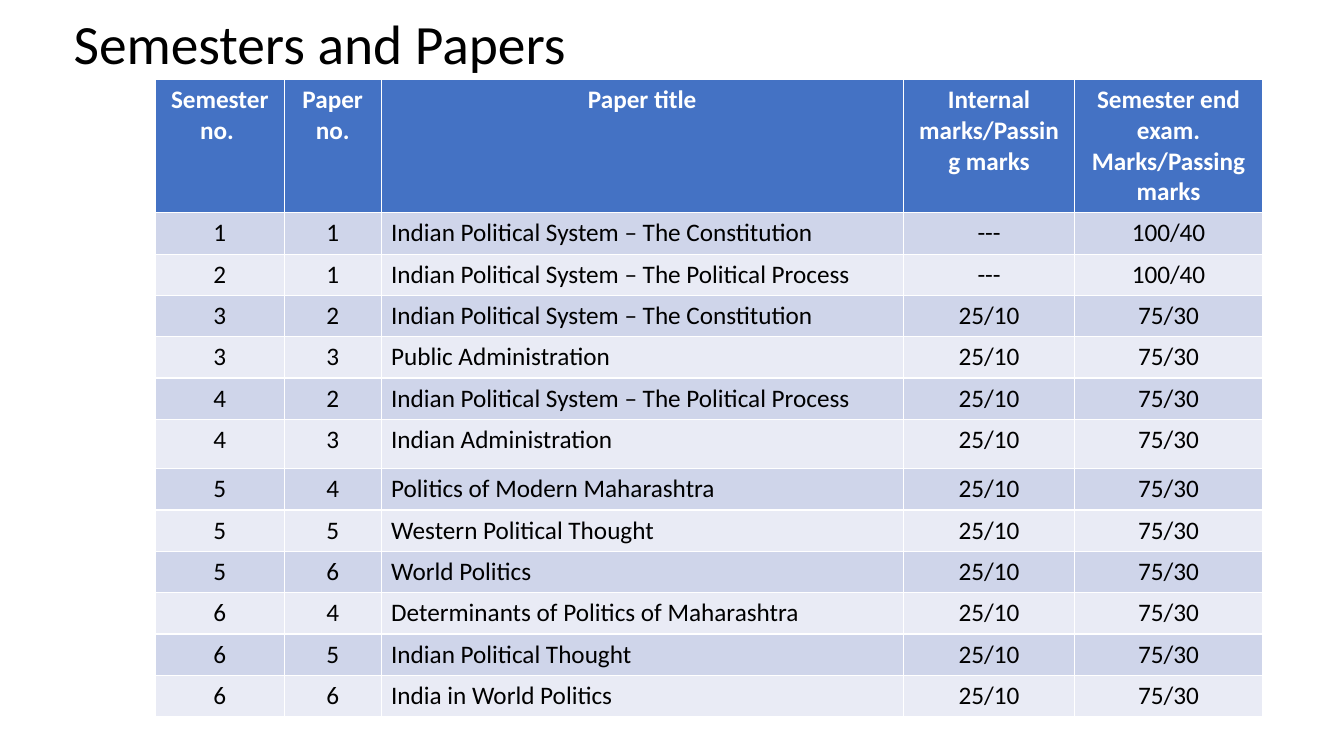
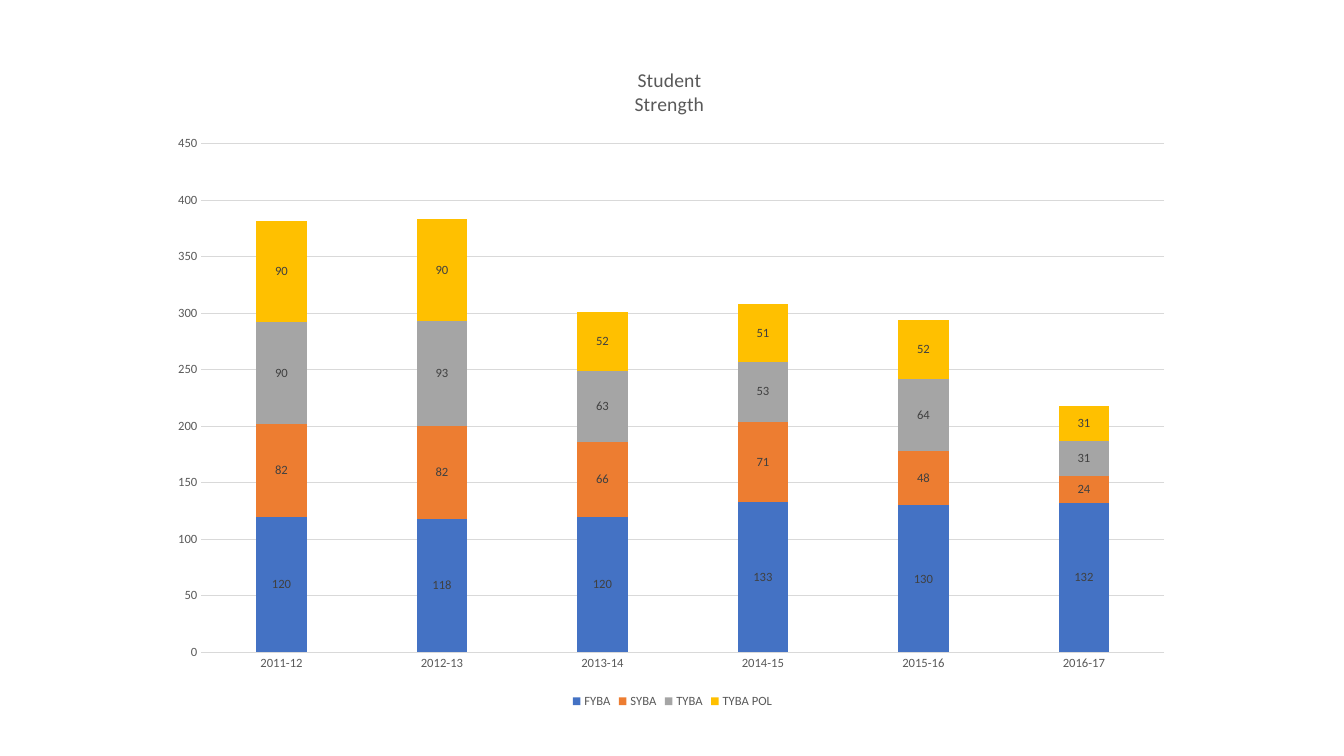
from lxml import etree
from pptx import Presentation
from pptx.chart.data import CategoryChartData
from pptx.dml.color import RGBColor
from pptx.enum.chart import XL_CHART_TYPE, XL_LEGEND_POSITION, XL_TICK_MARK
from pptx.enum.text import MSO_ANCHOR, MSO_AUTO_SIZE, PP_ALIGN
from pptx.oxml.ns import qn
from pptx.util import Inches, Pt


class Theme:
    font = "Calibri"
    black = RGBColor(0x00, 0x00, 0x00)
    white = RGBColor(0xFF, 0xFF, 0xFF)
    blue = RGBColor(0x44, 0x72, 0xC4)
    orange = RGBColor(0xED, 0x7D, 0x31)
    grey = RGBColor(0xA5, 0xA5, 0xA5)
    gold = RGBColor(0xFF, 0xC0, 0x00)
    bands = (RGBColor(0xCF, 0xD5, 0xEA), RGBColor(0xE9, 0xEB, 0xF5))
    label = RGBColor(0x40, 0x40, 0x40)
    axis_text = RGBColor(0x59, 0x59, 0x59)
    rule = RGBColor(0xD9, 0xD9, 0xD9)
    title_size = 39.6
    table_size = 18
    chart_title_size = 14
    chart_size = 9


def set_font(font, size, color, bold=False):
    font.name = Theme.font
    font.size = Pt(size)
    font.color.rgb = color
    font.bold = bold


def place(element, index, **fractions):
    """Give a chart part a fixed layout, in fractions of the chart's size."""
    for old in element.findall(qn("c:layout")):
        element.remove(old)
    layout = etree.Element(qn("c:layout"))
    manual = etree.SubElement(layout, qn("c:manualLayout"))
    if "w" in fractions:
        etree.SubElement(manual, qn("c:layoutTarget"), val="inner")
    for key in ("x", "y"):
        etree.SubElement(manual, qn(f"c:{key}Mode"), val="edge")
    for key, value in fractions.items():
        etree.SubElement(manual, qn(f"c:{key}"), val=str(value))
    element.insert(index, layout)


prs = Presentation()
prs.slide_width, prs.slide_height = Inches(13.33), Inches(7.5)

# Slide 1: table of papers
s = prs.slides.add_slide(prs.slide_layouts[5])
title = s.shapes.title
title.left, title.top = Inches(0.63), Inches(0.04)
title.width, title.height = Inches(12.42), Inches(0.84)
tf = title.text_frame
tf.text = "Semesters and Papers"
tf.auto_size = MSO_AUTO_SIZE.NONE
tf.vertical_anchor = MSO_ANCHOR.MIDDLE
p = tf.paragraphs[0]
p.alignment = PP_ALIGN.LEFT
p.line_spacing = 0.9
set_font(p.font, Theme.title_size, Theme.black)

headers = ("Semester no. ", "Paper no.", "Paper title",
           "Internal marks/Passing marks", "Semester end exam. Marks/Passing marks")
papers = [
    (1, 1, "Indian Political System – The Constitution"),
    (2, 1, "Indian Political System – The Political Process"),
    (3, 2, "Indian Political System – The Constitution"),
    (3, 3, "Public Administration"),
    (4, 2, "Indian Political System – The Political Process"),
    (4, 3, "Indian Administration"),
    (5, 4, "Politics of Modern Maharashtra"),
    (5, 5, "Western Political Thought"),
    (5, 6, "World Politics"),
    (6, 4, "Determinants of Politics of Maharashtra"),
    (6, 5, "Indian Political Thought"),
    (6, 6, "India in World Politics"),
]
rows = [headers]
for paper in papers:
    marks = ("---", "100/40") if paper[0] <= 2 else ("25/10", "75/30")
    rows.append(paper + marks)

col_widths = (1.28, 0.96, 5.18, 1.7, 1.86)
row_heights = [0.81] + [0.41] * len(papers)
row_heights[6] = 0.49
title_col = 2
table = s.shapes.add_table(len(rows), len(headers), Inches(1.54), Inches(0.79),
                           Inches(sum(col_widths)), Inches(sum(row_heights))).table
for column, width in zip(table.columns, col_widths):
    column.width = Inches(width)
for i, (values, height) in enumerate(zip(rows, row_heights)):
    table.rows[i].height = Inches(height)
    is_header = i == 0
    for j, value in enumerate(values):
        cell = table.cell(i, j)
        cell.fill.solid()
        cell.fill.fore_color.rgb = Theme.blue if is_header else Theme.bands[(i - 1) % 2]
        cell.text = str(value)
        p = cell.text_frame.paragraphs[0]
        centred = is_header or j != title_col
        p.alignment = PP_ALIGN.CENTER if centred else PP_ALIGN.LEFT
        set_font(p.font, Theme.table_size,
                 Theme.white if is_header else Theme.black, is_header)

# Slide 2: chart of student strength
s = prs.slides.add_slide(prs.slide_layouts[6])
strength = [
    ("FYBA", (120, 118, 120, 133, 130, 132), Theme.blue),
    ("SYBA", (82, 82, 66, 71, 48, 24), Theme.orange),
    ("TYBA", (90, 93, 63, 53, 64, 31), Theme.grey),
    ("TYBA POL", (90, 90, 52, 51, 52, 31), Theme.gold),
]
data = CategoryChartData()
data.categories = [f"{year}-{year % 100 + 1}" for year in range(2011, 2017)]
for name, values, _ in strength:
    data.add_series(name, values)
chart = s.shapes.add_chart(XL_CHART_TYPE.COLUMN_STACKED, Inches(1.59), Inches(0.43),
                           Inches(10.16), Inches(6.64), data).chart
set_font(chart.font, 10, Theme.black)

chart.has_title = True
tf = chart.chart_title.text_frame
tf.text = "Student\nStrength"
for p in tf.paragraphs:
    set_font(p.font, Theme.chart_title_size, Theme.axis_text)
chart.chart_title.include_in_layout = False

chart.has_legend = True
chart.legend.position = XL_LEGEND_POSITION.BOTTOM
chart.legend.include_in_layout = False
set_font(chart.legend.font, Theme.chart_size, Theme.axis_text)

for axis in (chart.category_axis, chart.value_axis):
    axis.major_tick_mark = axis.minor_tick_mark = XL_TICK_MARK.NONE
    set_font(axis.tick_labels.font, Theme.chart_size, Theme.axis_text)
chart.value_axis.minimum_scale = 0
chart.value_axis.maximum_scale = 450
chart.value_axis.major_unit = 50
chart.value_axis.format.line.fill.background()
for line in (chart.category_axis.format.line, chart.value_axis.major_gridlines.format.line):
    line.color.rgb = Theme.rule
    line.width = Pt(0.75)

plot = chart.plots[0]
plot.gap_width = 219
plot.overlap = 100
plot.vary_by_categories = False
for series, (_, _, color) in zip(plot.series, strength):
    series.format.fill.solid()
    series.format.fill.fore_color.rgb = color
    series.data_labels.show_value = True
    set_font(series.data_labels.font, Theme.chart_size, Theme.label)

chart_xml = chart.element.find(qn("c:chart"))
place(chart_xml.find(qn("c:title")), 1, x=0.46, y=0.03)
place(chart_xml.find(qn("c:plotArea")), 0, x=0.04, y=0.15, w=0.94, h=0.76)

prs.save("out.pptx")
